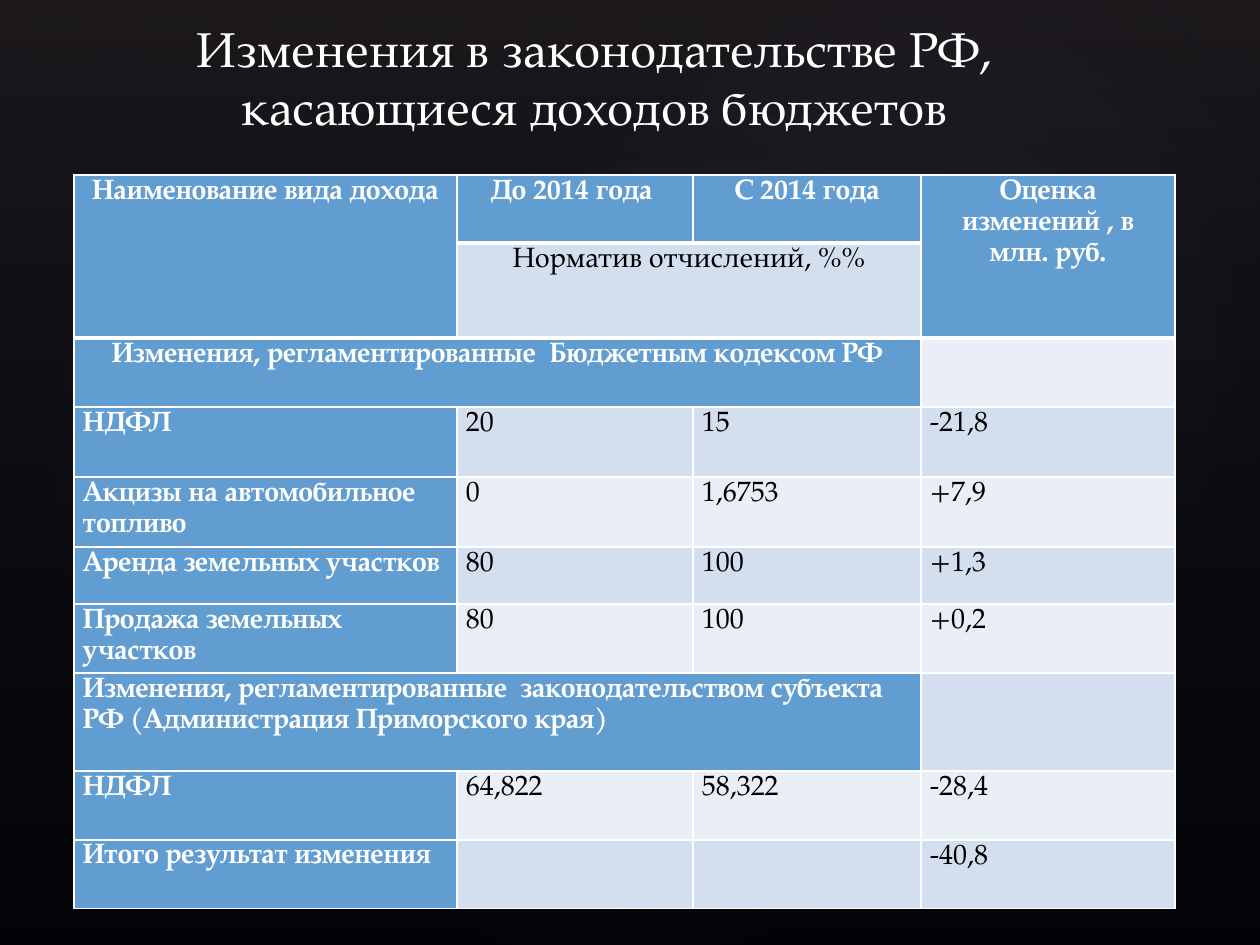
from lxml import etree
from pptx import Presentation
from pptx.dml.color import RGBColor
from pptx.enum import shapes, text
from pptx.oxml import ns, parse_xml
from pptx.util import Pt

PX = 914400 // 126
FONT = "TeX Gyre Pagella"
BLUE, PALE, LIGHT, WHITE, BLACK = "629DD1", "D3DFEE", "EAEFF7", "FFFFFF", "000000"
COLS = [383, 236, 228, 254]
HEIGHTS = [68, 95, 69, 70, 70, 57, 69, 98, 69, 69]
ROWS = [
    ["Наименование вида дохода", "До 2014 года ", "С 2014 года", "Оценка изменений , в млн. руб."],
    ["", "Норматив отчислений, %%", "", ""],
    ["Изменения, регламентированные  Бюджетным кодексом РФ", "", "", ""],
    ["НДФЛ", "20", "15", "-21,8"],
    ["Акцизы на автомобильное топливо", "0", "1,6753", "+7,9"],
    ["Аренда земельных участков", "80", "100", "+1,3"],
    ["Продажа земельных участков", "80", "100", "+0,2"],
    ["Изменения, регламентированные  законодательством субъекта РФ (Администрация Приморского края)", "", "", ""],
    ["НДФЛ", "64,822", "58,322", "-28,4"],
    ["Итого результат изменения", "", "", "-40,8"],
]
MERGES = [((0, 0), (1, 0)), ((0, 3), (1, 3)), ((1, 1), (1, 2)), ((2, 0), (2, 2)), ((7, 0), (7, 2))]


def px(*values):
    return [v * PX for v in values]


def rgb(color):
    return RGBColor.from_string(color)


def write(tf, words, size=16, color=BLACK, bold=False, align=text.PP_ALIGN.LEFT, spacing=None):
    p = tf.paragraphs[0]
    p.alignment = align
    p.line_spacing = spacing
    r = p.add_run()
    r.text = words
    r.font.name = FONT
    r.font.size = Pt(size)
    r.font.bold = bold
    r.font.color.rgb = rgb(color)


def add_glow(s, kind, box, stops, rotation=0):
    sp = s.shapes.add_shape(kind, *px(*box))
    sp.shadow.inherit = False
    sp.rotation = rotation
    sp.line.fill.background()
    sp.fill.gradient()
    grad = sp._element.spPr.find(ns.qn("a:gradFill"))
    marks = "".join(
        f'<a:gs pos="{pos * 1000}"><a:srgbClr val="{color}"><a:alpha val="{alpha * 1000}"/></a:srgbClr></a:gs>'
        for pos, color, alpha in stops)
    if kind == shapes.MSO_SHAPE.OVAL:
        way = '<a:path path="circle"><a:fillToRect l="50000" t="50000" r="50000" b="50000"/></a:path>'
    else:
        way = '<a:lin ang="5400000" scaled="0"/>'
    new = parse_xml(f'<a:gradFill {ns.nsdecls("a")} rotWithShape="1"><a:gsLst>{marks}</a:gsLst>{way}</a:gradFill>')
    grad.getparent().replace(grad, new)


def add_backdrop(s, box):
    x, y, w, h = box
    s.background.fill.solid()
    s.background.fill.fore_color.rgb = rgb(BLACK)
    add_glow(s, shapes.MSO_SHAPE.RECTANGLE, box, [(0, "504652", 36), (100, "242852", 10)])
    for dx, dy, gw, gh, turn, alpha in [(189, 144, 998, 786, 328.7, 7),
                                        (-38, 161, 764, 617, 294.3, 8),
                                        (451, 16, 893, 655, 328.7, 8)]:
        add_glow(s, shapes.MSO_SHAPE.OVAL, (x + dx, y + dy, gw, gh),
                 [(0, "C4BCC6", alpha), (58, "242852", 0)], turn)


def set_borders(cell, row):
    tcPr = cell._tc.get_or_add_tcPr()
    sides = {"lnL": 1, "lnR": 1, "lnB": 3 if row == 0 else 1}
    if row == 0:
        sides["lnT"] = 1
    for i, side in enumerate(k for k in ("lnL", "lnR", "lnT", "lnB") if k in sides):
        ln = etree.Element(ns.qn(f"a:{side}"), w=str(Pt(sides[side])))
        fill = etree.SubElement(ln, ns.qn("a:solidFill"))
        etree.SubElement(fill, ns.qn("a:srgbClr"), val=WHITE)
        tcPr.insert(i, ln)


def add_income_table(s, box):
    table = s.shapes.add_table(len(ROWS), len(COLS), *px(*box)).table
    for column, width in zip(table.columns, COLS):
        column.width = width * PX
    for row, height in zip(table.rows, HEIGHTS):
        row.height = height * PX
    for start, end in MERGES:
        table.cell(*start).merge(table.cell(*end))
    for i, row in enumerate(ROWS):
        for j, words in enumerate(row):
            cell = table.cell(i, j)
            header = i == 0 or j == 0
            cell.margin_left = cell.margin_right = 9 * PX
            cell.margin_top = cell.margin_bottom = 0
            cell.fill.solid()
            cell.fill.fore_color.rgb = rgb(BLUE if header else PALE if i % 2 else LIGHT)
            set_borders(cell, i)
            if words:
                write(cell.text_frame, words, color=WHITE if header else BLACK, bold=header,
                      align=text.PP_ALIGN.CENTER if i < 3 else text.PP_ALIGN.LEFT, spacing=1.15)


def add_title(s, box, words):
    title = s.shapes.title
    title.left, title.top, title.width, title.height = px(*box)
    tf = title.text_frame
    tf.word_wrap = True
    tf.auto_size = text.MSO_AUTO_SIZE.NONE
    tf.vertical_anchor = text.MSO_ANCHOR.BOTTOM
    write(tf, words, size=28, color=WHITE, align=text.PP_ALIGN.CENTER)
    s.shapes._spTree.append(title._element)


def main():
    prs = Presentation()
    prs.slide_width, prs.slide_height = px(1260, 945)
    s = prs.slides.add_slide(prs.slide_layouts[5])
    add_backdrop(s, (0, 0, 1260, 945))
    add_income_table(s, (74, 175, sum(COLS), sum(HEIGHTS)))
    add_title(s, (74, 16, 1040, 126), "Изменения в законодательстве РФ, касающиеся доходов бюджетов")
    prs.save("out.pptx")


if __name__ == "__main__":
    main()
